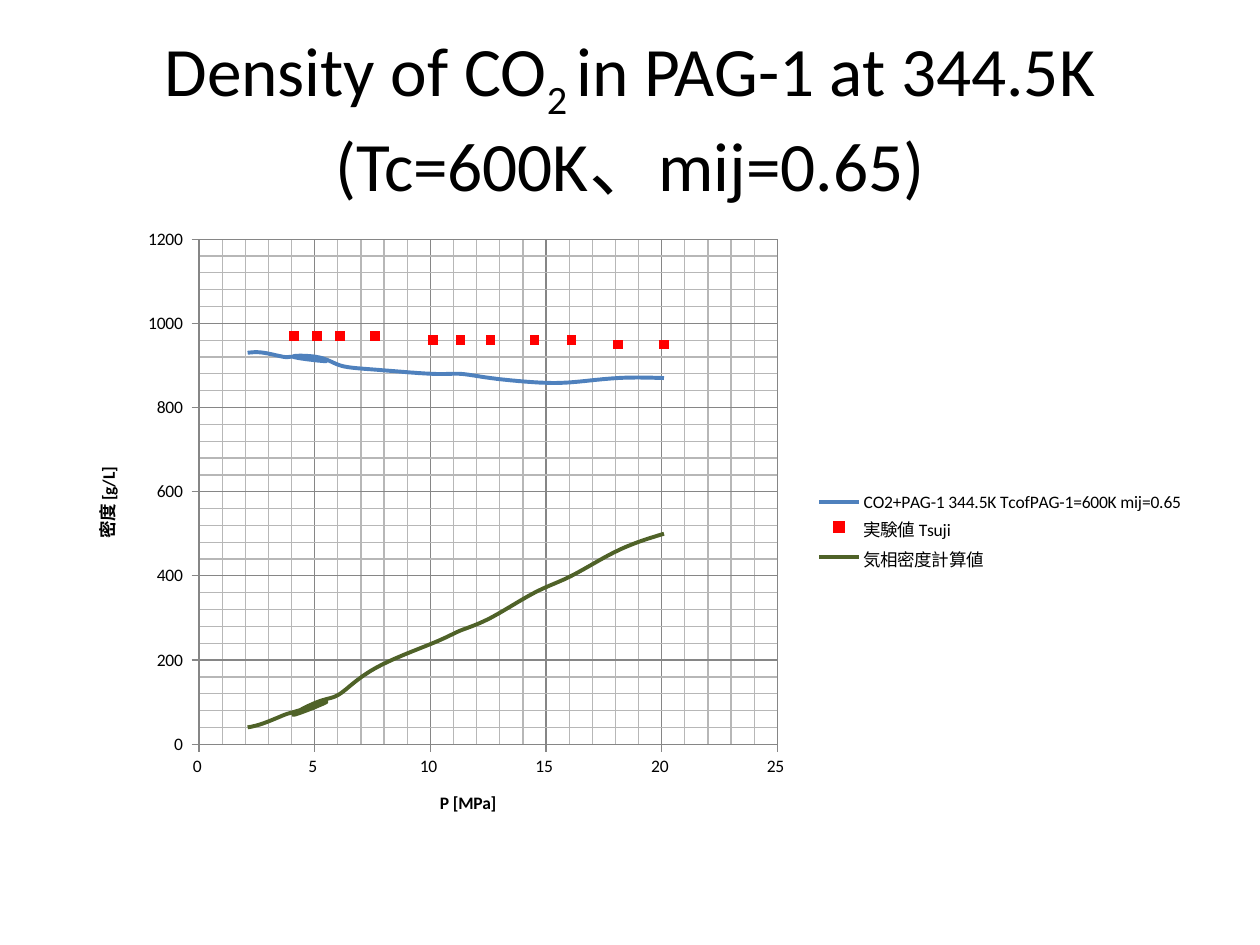
"""Build a slide comparing calculated and measured CO2 density in PAG-1."""
from dataclasses import dataclass

from lxml import etree
from pptx import Presentation
from pptx.chart.data import XyChartData
from pptx.dml.color import RGBColor
from pptx.enum.chart import (XL_CHART_TYPE, XL_LEGEND_POSITION,
                             XL_MARKER_STYLE, XL_TICK_MARK)
from pptx.enum.text import MSO_ANCHOR, MSO_AUTO_SIZE, PP_ALIGN
from pptx.oxml.ns import qn
from pptx.util import Inches, Pt

SMOOTH_SCATTER = XL_CHART_TYPE.XY_SCATTER_SMOOTH_NO_MARKERS
LEGEND_RIGHT = XL_LEGEND_POSITION.RIGHT
SQUARE = XL_MARKER_STYLE.SQUARE
TICK_OUT, TICK_NONE = XL_TICK_MARK.OUTSIDE, XL_TICK_MARK.NONE
MIDDLE, NO_AUTOFIT, CENTER = MSO_ANCHOR.MIDDLE, MSO_AUTO_SIZE.NONE, PP_ALIGN.CENTER


@dataclass(frozen=True)
class Theme:
    """Colours, font and type sizes of the slide."""
    font: str = "Calibri"
    title_size: float = 39.6
    chart_size: float = 10
    curve_width: float = 2.25
    grid_width: float = 0.75
    text: RGBColor = RGBColor.from_string("000000")
    major_grid: RGBColor = RGBColor.from_string("868686")
    minor_grid: RGBColor = RGBColor.from_string("B7B7B7")
    liquid: RGBColor = RGBColor.from_string("4F81BD")
    measured: RGBColor = RGBColor.from_string("FF0000")
    vapour: RGBColor = RGBColor.from_string("4F6228")


@dataclass(frozen=True)
class DensitySeries:
    """One density data set over pressure."""
    name: str
    pressures: list[float]
    densities: list[int]
    color: RGBColor
    measured: bool = False


@dataclass(frozen=True)
class AxisScale:
    """Title, upper limit and grid steps of an axis."""
    title: str
    maximum: int
    major: int
    minor: int
    rotation: int = 0


THEME = Theme()
MEASURED_PRESSURES = [4.1, 5.1, 6.1, 7.6, 10.1, 11.3, 12.6, 14.5, 16.1, 18.1, 20.1]
CALCULATED_PRESSURES = [2.1, 2.8, 3.7, 4.3, 5.5] + MEASURED_PRESSURES
DENSITIES = [
    DensitySeries("CO2+PAG-1 344.5K TcofPAG-1=600K mij=0.65", CALCULATED_PRESSURES,
                  [930, 930, 920, 920, 910, 920, 920, 900, 890, 880, 880, 870,
                   860, 860, 870, 870], THEME.liquid),
    DensitySeries("実験値 Tsuji", MEASURED_PRESSURES,
                  [970, 970, 970, 970, 960, 960, 960, 960, 960, 950, 950],
                  THEME.measured, measured=True),
    DensitySeries("気相密度計算値", CALCULATED_PRESSURES,
                  [40, 50, 70, 80, 100, 70, 100, 120, 180, 240, 270, 300,
                   360, 400, 460, 500], THEME.vapour),
]
PRESSURE_SCALE = AxisScale("P [MPa]", 25, 5, 1)
DENSITY_SCALE = AxisScale("密度 [g/L]", 1200, 200, 40, rotation=-5400000)
PLOT_AREA = {"x": 0.12, "y": 0.03, "w": 0.51, "h": 0.81}


def style_line(line, color: RGBColor, width: float) -> None:
    """Give a line its colour and width in points."""
    line.color.rgb = color
    line.width = Pt(width)


def style_minor_grid(axis) -> None:
    """Show thin, light minor gridlines."""
    axis.has_minor_gridlines = True
    grid = axis._element.find(qn("c:minorGridlines"))
    line = etree.SubElement(etree.SubElement(grid, qn("c:spPr")), qn("a:ln"))
    line.set("w", str(int(Pt(THEME.grid_width))))
    fill = etree.SubElement(line, qn("a:solidFill"))
    etree.SubElement(fill, qn("a:srgbClr")).set("val", str(THEME.minor_grid))


def fill_title(title) -> None:
    """Place the heading and write its subscripted formula."""
    title.left, title.top = Inches(0.5), Inches(0.3)
    title.width, title.height = Inches(9), Inches(1.25)
    frame = title.text_frame
    frame.word_wrap = True
    frame.auto_size = NO_AUTOFIT
    frame.vertical_anchor = MIDDLE
    heading = frame.paragraphs[0]
    heading.alignment = CENTER
    heading.font.name = THEME.font
    heading.font.size = Pt(THEME.title_size)
    heading.font.color.rgb = THEME.text
    for words, baseline in (("Density of CO", 0), ("2 ", -25000),
                            ("in PAG-1 at 344.5K (Tc=600K、mij=0.65)", 0)):
        run = heading.add_run()
        run.text = words
        if baseline:
            run._r.get_or_add_rPr().set("baseline", str(baseline))


def style_axis(axis, scale: AxisScale) -> None:
    """Set the scale, grid and title of an axis."""
    axis.minimum_scale, axis.maximum_scale = 0, scale.maximum
    axis.major_unit, axis.minor_unit = scale.major, scale.minor
    axis.major_tick_mark, axis.minor_tick_mark = TICK_OUT, TICK_NONE
    axis.has_major_gridlines = True
    style_line(axis.major_gridlines.format.line, THEME.major_grid, THEME.grid_width)
    style_minor_grid(axis)
    style_line(axis.format.line, THEME.major_grid, THEME.grid_width)
    axis.tick_labels.number_format = "0_ "
    axis.tick_labels.number_format_is_linked = False
    caption = axis.axis_title.text_frame
    caption.text = scale.title
    font = caption.paragraphs[0].font
    font.name, font.size, font.bold = THEME.font, Pt(THEME.chart_size), True
    font.color.rgb = THEME.text
    body = axis.axis_title._element.find(".//" + qn("a:bodyPr"))
    body.set("rot", str(scale.rotation))
    body.set("vert", "horz")


def style_series(plotted, density: DensitySeries) -> None:
    """Draw measured data as squares and calculated data as a smooth curve."""
    if density.measured:
        plotted.format.line.fill.background()
        plotted.marker.style, plotted.marker.size = SQUARE, 5
        plotted.marker.format.fill.solid()
        plotted.marker.format.fill.fore_color.rgb = density.color
        plotted.marker.format.line.fill.background()
    else:
        style_line(plotted.format.line, density.color, THEME.curve_width)
    plotted._element.find(qn("c:smooth")).set("val", "1")


def place_plot(chart) -> None:
    """Fix the inner plot area as fractions of the chart."""
    area = chart._chartSpace.find(".//" + qn("c:plotArea"))
    layout = area.find(qn("c:layout"))
    if layout is None:
        layout = etree.Element(qn("c:layout"))
        area.insert(0, layout)
    manual = etree.SubElement(layout, qn("c:manualLayout"))
    settings = {"layoutTarget": "inner", "xMode": "edge", "yMode": "edge", **PLOT_AREA}
    for tag, setting in settings.items():
        etree.SubElement(manual, qn(f"c:{tag}")).set("val", str(setting))


def add_density_chart(slide) -> None:
    """Add the density scatter chart."""
    chart_data = XyChartData()
    for density in DENSITIES:
        points = chart_data.add_series(density.name)
        for pressure, value in zip(density.pressures, density.densities):
            points.add_data_point(pressure, value)
    chart = slide.shapes.add_chart(SMOOTH_SCATTER, Inches(0.5), Inches(1.75),
                                   Inches(9), Inches(4.95), chart_data).chart
    chart.has_title = False
    chart.font.name, chart.font.size = THEME.font, Pt(THEME.chart_size)
    chart.font.color.rgb = THEME.text
    chart.has_legend = True
    chart.legend.position = LEGEND_RIGHT
    chart.legend.include_in_layout = False
    style_axis(chart.category_axis, PRESSURE_SCALE)
    style_axis(chart.value_axis, DENSITY_SCALE)
    plot = chart.plots[0]
    plot.vary_by_categories = False
    for plotted, density in zip(plot.series, DENSITIES):
        style_series(plotted, density)
    place_plot(chart)


def main() -> None:
    """Build and save the slide."""
    deck = Presentation()
    deck.slide_width, deck.slide_height = Inches(10), Inches(7.5)
    slide = deck.slides.add_slide(deck.slide_layouts[5])
    fill_title(slide.shapes.title)
    add_density_chart(slide)
    deck.save("out.pptx")


if __name__ == "__main__":
    main()
